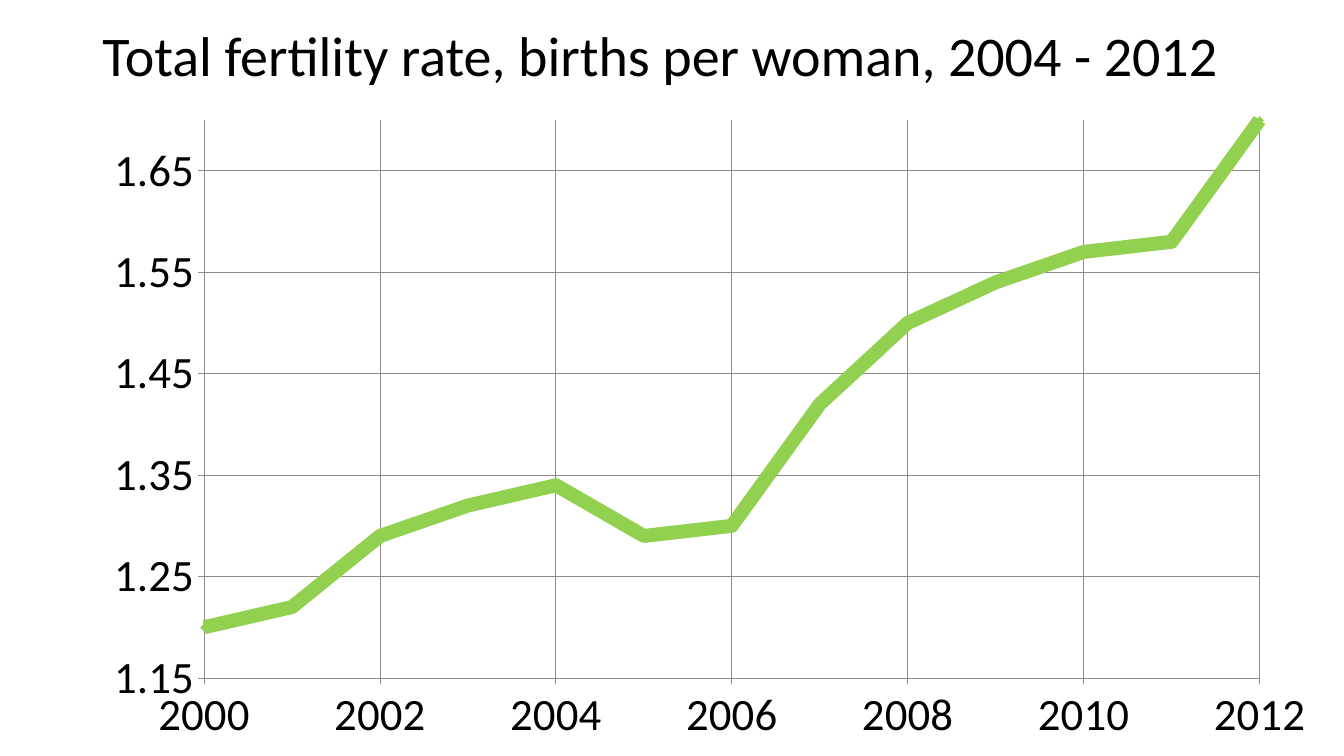
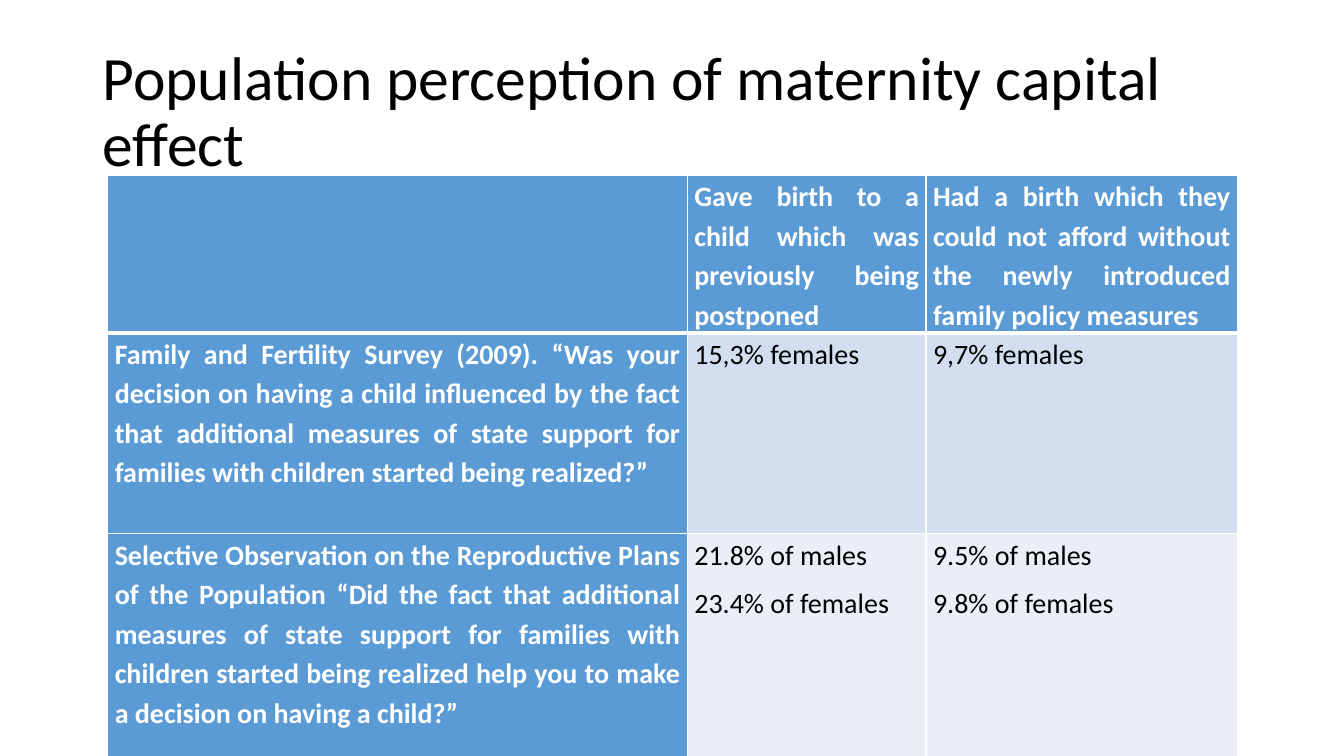
"""Build two slides on fertility: a smooth line chart and a survey table."""
from pptx import Presentation
from pptx.chart.data import XyChartData
from pptx.dml.color import RGBColor
from pptx.enum.chart import XL_CHART_TYPE, XL_MARKER_STYLE, XL_TICK_MARK
from pptx.enum.text import MSO_ANCHOR, MSO_AUTO_SIZE, PP_ALIGN
from pptx.oxml import parse_xml
from pptx.oxml.ns import nsdecls
from pptx.util import Pt

SMOOTH = XL_CHART_TYPE.XY_SCATTER_SMOOTH
DIAMOND = XL_MARKER_STYLE.DIAMOND
OUT, NONE = XL_TICK_MARK.OUTSIDE, XL_TICK_MARK.NONE
LEFT, JUST = PP_ALIGN.LEFT, PP_ALIGN.JUSTIFY
MID, TOP = MSO_ANCHOR.MIDDLE, MSO_ANCHOR.TOP
NO_FIT = MSO_AUTO_SIZE.NONE

FONT = "Calibri"
HEX = {"black": "000000", "white": "FFFFFF", "green": "92D050", "grey": "8B8B8B",
       "blue": "5B9BD5", "band": "D2DEEF", "pale": "EAEFF7"}
TITLE_FRAME = {"word_wrap": True, "auto_size": NO_FIT, "vertical_anchor": MID}
TITLE_PARA = {"alignment": LEFT, "line_spacing": 0.9}
CELL_PARA = {"alignment": JUST, "line_spacing": 1.15, "space_after": Pt(6)}
CELL_BOX = {"margin_left": Pt(5), "margin_right": Pt(5), "margin_top": Pt(0),
            "margin_bottom": Pt(0), "vertical_anchor": TOP}
AXIS = {"has_major_gridlines": True, "major_tick_mark": OUT, "minor_tick_mark": NONE}
X_AXIS = {"minimum_scale": 2000, "maximum_scale": 2012, "major_unit": 2}
Y_AXIS = {"minimum_scale": 1.15, "maximum_scale": 1.7, "major_unit": 0.1}
PLOT = {"x": 0.09, "y": 0.02, "w": 0.85, "h": 0.86}

RATES = [1.2, 1.22, 1.29, 1.32, 1.34, 1.29, 1.3, 1.42, 1.5, 1.54, 1.57, 1.58, 1.7]
COLS = [414, 170.5, 222.5]
ROWS = [108, 143.5, 163.5]
CELLS = [
    ["", "Gave birth to a child which was previously being postponed",
     "Had a birth which they could not afford without the newly introduced "
     "family policy measures"],
    ["Family and Fertility Survey (2009). “Was your decision on having a child "
     "influenced by the fact that additional measures of state support for "
     "families with children started being realized?”",
     "15,3% females", "9,7% females"],
    ["Selective Observation on the Reproductive Plans of the Population “Did the "
     "fact that additional measures of state support for families with children "
     "started being realized help you to make a decision on having a child?”",
     "21.8% of males\n23.4% of females", "9.5% of males\n9.8% of females"],
]


def apply(item, form):
    """Set each value of a format dict on an item."""
    for name, value in form.items():
        setattr(item, name, value)


def ink(name):
    """Return the named colour."""
    return RGBColor.from_string(HEX[name])


def style(font, size, hue="black", bold=False):
    """Format a font."""
    apply(font, {"name": FONT, "size": Pt(size), "bold": bold})
    font.color.rgb = ink(hue)


def draw(line, hue, width):
    """Format a line."""
    line.color.rgb = ink(hue)
    line.width = Pt(width)


def start(deck, text, size, top, height):
    """Add a slide with a formatted title."""
    slide = deck.slides.add_slide(deck.slide_layouts[5])
    title = slide.shapes.title
    apply(title, {"left": Pt(66), "top": Pt(top), "width": Pt(828), "height": Pt(height)})
    frame = title.text_frame
    apply(frame, TITLE_FRAME)
    frame.text = text
    para = frame.paragraphs[0]
    apply(para, TITLE_PARA)
    style(para.runs[0].font, size)
    return slide


def place(chart):
    """Fix the inner plot area of a chart."""
    plot = chart._chartSpace.xpath("c:chart/c:plotArea")[0]
    for old in plot.xpath("c:layout"):
        plot.remove(old)
    modes = "".join(f'<c:{key}Mode val="edge"/>' for key in "xy")
    sides = "".join(f'<c:{key} val="{value}"/>' for key, value in PLOT.items())
    plot.insert(0, parse_xml(
        f'<c:layout {nsdecls("c")}><c:manualLayout><c:layoutTarget val="inner"/>'
        f"{modes}{sides}</c:manualLayout></c:layout>"))


def scale(axis, span, form):
    """Format a value axis with its grid and labels."""
    apply(axis, {**AXIS, **span})
    draw(axis.format.line, "grey", 0.75)
    draw(axis.major_gridlines.format.line, "grey", 0.75)
    apply(axis.tick_labels, {"number_format": form, "number_format_is_linked": False})
    style(axis.tick_labels.font, 32)


def add_curve(slide):
    """Add the smooth chart of yearly rates."""
    data = XyChartData()
    points = data.add_series("Series 1")
    for year, rate in enumerate(RATES, 2000):
        points.add_data_point(year, rate)
    frame = slide.shapes.add_chart(SMOOTH, Pt(66), Pt(76.5), Pt(887), Pt(463.5), data)
    chart = frame.chart
    apply(chart, {"has_title": False, "has_legend": False})
    style(chart.font, 10)
    chart.plots[0].vary_by_categories = False
    scale(chart.category_axis, X_AXIS, "0")
    scale(chart.value_axis, Y_AXIS, "0.00")
    curve = chart.plots[0].series[0]
    draw(curve.format.line, "green", 10)
    mark = curve.marker
    apply(mark, {"style": DIAMOND, "size": 5})
    mark.format.fill.solid()
    mark.format.fill.fore_color.rgb = ink("green")
    draw(mark.format.line, "green", 0.75)
    place(chart)


def edge(cell, base):
    """Draw white borders round a cell, with a given base width."""
    props = cell._tc.get_or_add_tcPr()
    for spot, side in enumerate("LRTB"):
        width = Pt(base if side == "B" else 1)
        props.insert(spot, parse_xml(
            f'<a:ln{side} {nsdecls("a")} w="{width}"><a:solidFill>'
            f'<a:srgbClr val="{HEX["white"]}"/></a:solidFill></a:ln{side}>'))


def fill_cell(cell, text, back, head, base):
    """Write and format one table cell."""
    apply(cell, CELL_BOX)
    cell.text = text
    for para in cell.text_frame.paragraphs:
        apply(para, CELL_PARA)
        style(para.font, 20, "white" if head else "black", head)
        for run in para.runs:
            style(run.font, 20, "white" if head else "black", head)
    cell.fill.solid()
    cell.fill.fore_color.rgb = ink("blue" if head else back)
    edge(cell, base)


def add_grid(slide):
    """Add the table of survey results."""
    frame = slide.shapes.add_table(len(ROWS), len(COLS), Pt(77), Pt(125),
                                   Pt(sum(COLS)), Pt(sum(ROWS)))
    table = frame.table
    for col, width in zip(table.columns, COLS):
        col.width = Pt(width)
    for row, height in zip(table.rows, ROWS):
        row.height = Pt(height)
    for y, (texts, back) in enumerate(zip(CELLS, ["blue", "band", "pale"])):
        for x, text in enumerate(texts):
            fill_cell(table.cell(y, x), text, back, y == 0 or x == 0, 1 if y else 3)


def main():
    """Build and save the deck."""
    deck = Presentation()
    apply(deck, {"slide_width": Pt(960), "slide_height": Pt(540)})
    add_curve(start(deck, "Total fertility rate, births per woman, 2004 - 2012", 40, 0, 83.5))
    add_grid(start(deck, "Population perception of maternity capital effect", 44, 29, 104.5))
    deck.save("out.pptx")


if __name__ == "__main__":
    main()
